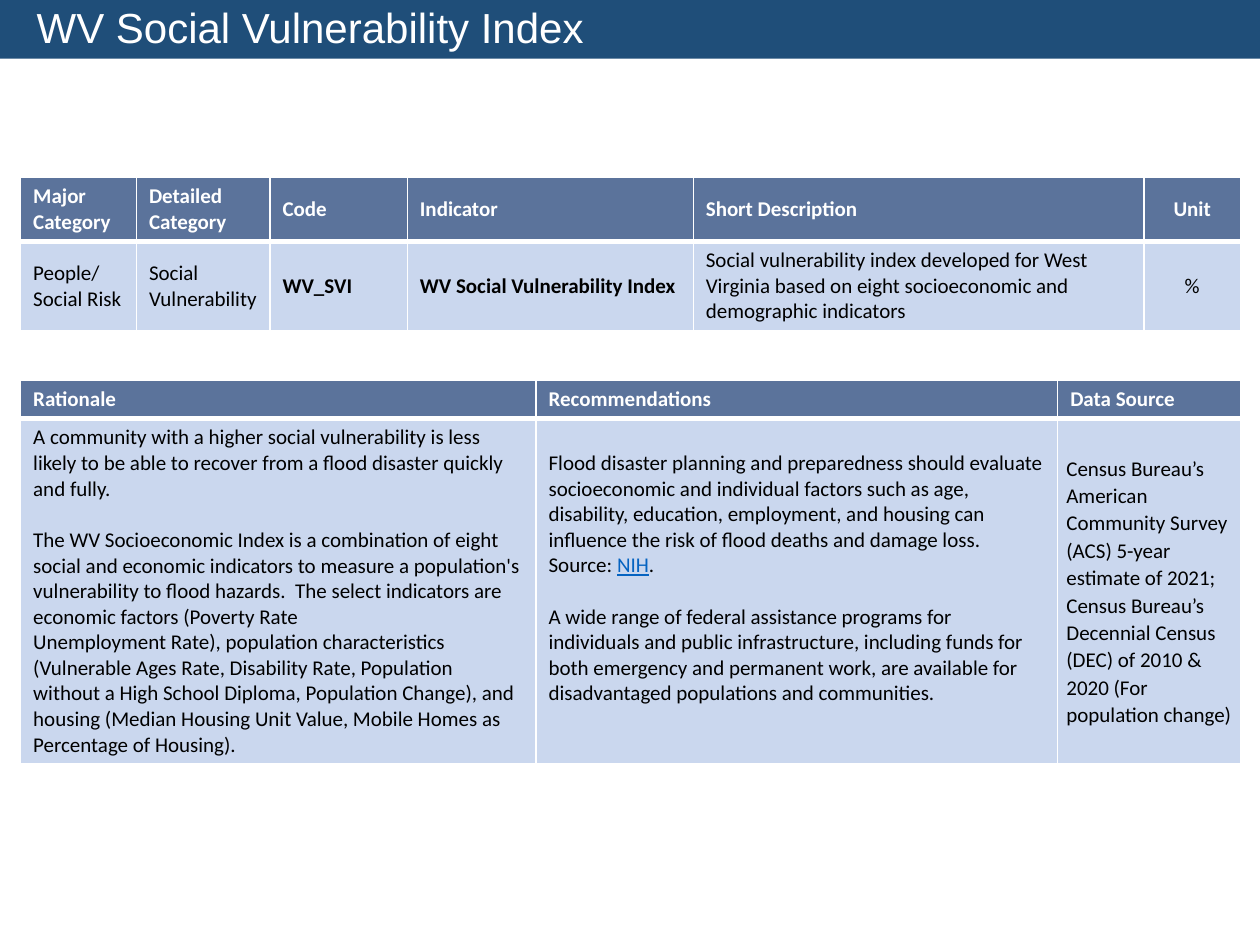
from lxml.etree import SubElement
from pptx import Presentation
from pptx.dml.color import RGBColor
from pptx.enum.shapes import MSO_SHAPE
from pptx.enum.text import MSO_ANCHOR, PP_ALIGN
from pptx.oxml.ns import qn
from pptx.util import Pt

COLORS = {
    "banner": "1F4E79",
    "header": "5B739B",
    "body": "CAD7EE",
    "white": "FFFFFF",
    "black": "000000",
    "link": "0563C1",
}
BLANK_LINE = 14.65


def add_run(paragraph, text, color, size=12, font="Calibri", bold=False):
    run = paragraph.add_run()
    run.text = text
    run.font.name = font
    run.font.size = Pt(size)
    run.font.bold = bold
    run.font.underline = color == "link"
    run.font.color.rgb = RGBColor.from_string(COLORS[color])


def set_borders(cell, widths):
    properties = cell._tc.get_or_add_tcPr()
    for side, width in widths.items():
        line = SubElement(properties, qn(f"a:ln{side}"), w=str(Pt(width)))
        fill = SubElement(line, qn("a:solidFill"))
        SubElement(fill, qn("a:srgbClr"), val=COLORS["white"])


presentation = Presentation()
presentation.slide_width = Pt(720)
presentation.slide_height = Pt(540)
slide = presentation.slides.add_slide(presentation.slide_layouts[6])

banner = slide.shapes.add_shape(MSO_SHAPE.RECTANGLE, Pt(0), Pt(0), Pt(720), Pt(33.6))
banner.shadow.inherit = False
banner.fill.solid()
banner.fill.fore_color.rgb = RGBColor.from_string(COLORS["banner"])
banner.line.fill.background()
banner.text_frame.word_wrap = True
banner.text_frame.vertical_anchor = MSO_ANCHOR.BOTTOM
banner.text_frame.margin_left = Pt(21)
title = banner.text_frame.paragraphs[0]
title.alignment = PP_ALIGN.LEFT
title.line_spacing = 0.9
add_run(title, "WV Social Vulnerability Index", "white", 24, "Arial")

indicator_rows = [
    ["Major Category", "Detailed Category", "Code", "Indicator", "Short Description", "Unit"],
    [
        "People/\nSocial Risk",
        "Social Vulnerability",
        "WV_SVI",
        "WV Social Vulnerability Index",
        "Social vulnerability index developed for West Virginia based on eight "
        "socioeconomic and demographic indicators",
        "%",
    ],
]
rationale_rows = [
    ["Rationale", "Recommendations", "Data Source"],
    [
        "A community with a higher social vulnerability is less likely to be able to "
        "recover from a flood disaster quickly and fully.\n"
        "The WV Socioeconomic Index is a combination of eight social and economic "
        "indicators to measure a population's vulnerability to flood hazards.  The select "
        "indicators are economic factors (Poverty Rate\n"
        "Unemployment Rate), population characteristics (Vulnerable Ages Rate, Disability "
        "Rate, Population without a High School Diploma, Population Change), and housing "
        "(Median Housing Unit Value, Mobile Homes as Percentage of Housing).",
        "Flood disaster planning and preparedness should evaluate socioeconomic and "
        "individual factors such as age, disability, education, employment, and housing "
        "can influence the risk of flood deaths and damage loss.  Source: |NIH|.\n"
        "A wide range of federal assistance programs for individuals and public "
        "infrastructure, including funds for both emergency and permanent work, are "
        "available for disadvantaged populations and communities.",
        "Census Bureau’s American Community Survey (ACS) 5-year estimate of 2021; Census "
        "Bureau’s Decennial Census (DEC) of 2010 & 2020 (For population change)",
    ],
]
table_specs = [
    (101.5, [66.2, 76.3, 78.5, 163.4, 257.6, 55.1], [36, 50.4], indicator_rows),
    (217.4, [294.5, 298.1, 104.4], [21.6, 194.4], rationale_rows),
]

tables = []
for top, column_widths, row_heights, rows in table_specs:
    frame = slide.shapes.add_table(
        len(rows), len(column_widths), Pt(11.8), Pt(top),
        Pt(sum(column_widths)), Pt(sum(row_heights)),
    )
    table = frame.table
    table.first_row = table.horz_banding = False
    tables.append(table)
    for column, width in zip(table.columns, column_widths):
        column.width = Pt(width)
    for row_index, texts in enumerate(rows):
        is_header = row_index == 0
        table.rows[row_index].height = Pt(row_heights[row_index])
        for column_index, text in enumerate(texts):
            cell = table.cell(row_index, column_index)
            cell.vertical_anchor = MSO_ANCHOR.MIDDLE
            top_width, bottom_width = (1, 3) if is_header else (3, 1)
            set_borders(cell, {"L": 1, "R": 1, "T": top_width, "B": bottom_width})
            cell.fill.solid()
            cell.fill.fore_color.rgb = RGBColor.from_string(
                COLORS["header" if is_header else "body"]
            )
            bold = is_header or text.startswith("WV")
            for index, line_text in enumerate(text.split("\n")):
                frame_text = cell.text_frame
                paragraph = frame_text.paragraphs[0] if index == 0 else frame_text.add_paragraph()
                paragraph.alignment = PP_ALIGN.CENTER if text in ("Unit", "%") else PP_ALIGN.LEFT
                for part in line_text.split("|"):
                    color = "white" if is_header else "link" if part == "NIH" else "black"
                    add_run(paragraph, part, color, bold=bold)

rationale, recommendations, data_source = tables[1].rows[1].cells
for cell in (rationale, recommendations):
    cell.text_frame.paragraphs[0].space_after = Pt(BLANK_LINE)
recommendations.margin_bottom = Pt(3.6 + BLANK_LINE)
data_source.margin_left = data_source.margin_right = Pt(5)
data_source.margin_top = data_source.margin_bottom = Pt(0)
data_source.text_frame.paragraphs[0].line_spacing = 1.07

presentation.save("out.pptx")
